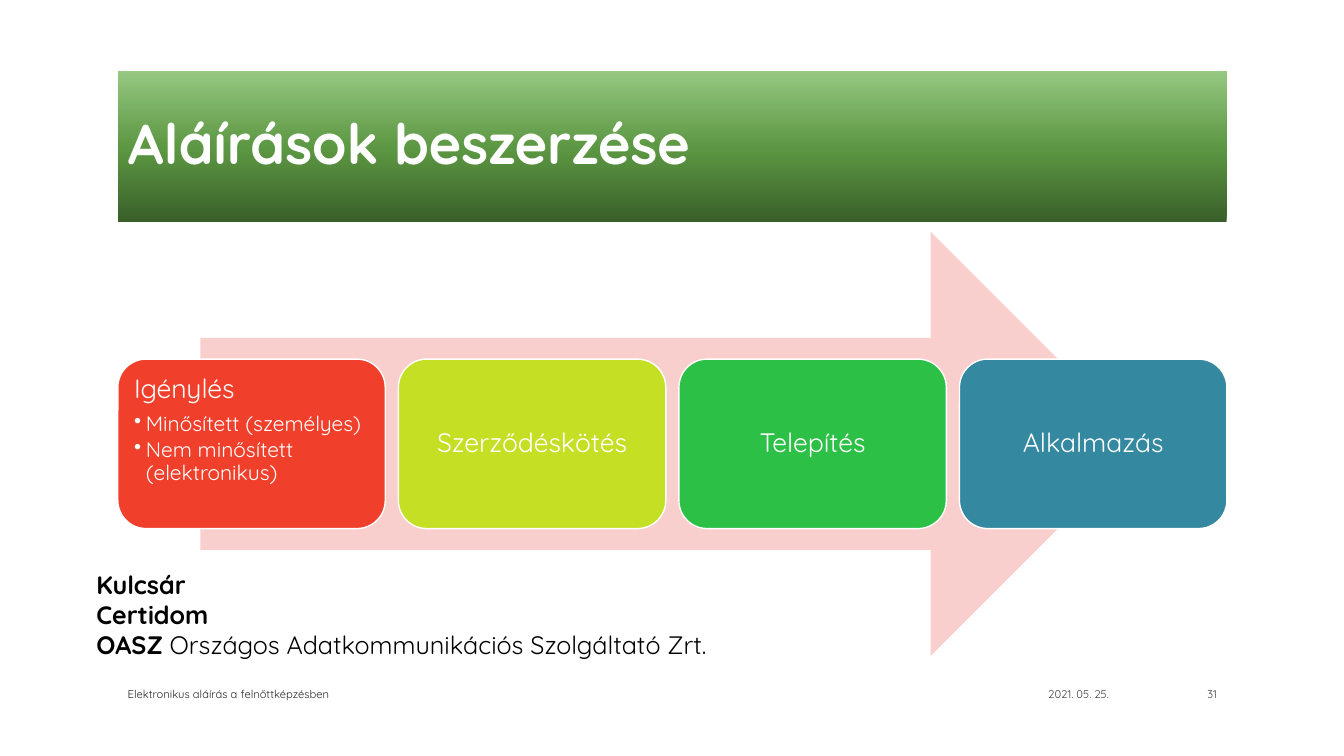
from copy import deepcopy

from lxml import etree
from pptx import Presentation
from pptx.dml.color import RGBColor
from pptx.enum.shapes import MSO_SHAPE
from pptx.enum.text import MSO_ANCHOR, MSO_AUTO_SIZE, PP_ALIGN
from pptx.oxml.ns import qn
from pptx.util import Cm, Pt

LEFT, CENTER, RIGHT = PP_ALIGN.LEFT, PP_ALIGN.CENTER, PP_ALIGN.RIGHT
TOP, MIDDLE, BOTTOM = MSO_ANCHOR.TOP, MSO_ANCHOR.MIDDLE, MSO_ANCHOR.BOTTOM
NO_AUTOFIT = MSO_AUTO_SIZE.NONE
ARROW, CARD = MSO_SHAPE.RIGHT_ARROW, MSO_SHAPE.ROUNDED_RECTANGLE
FONT = "Quicksand"

TITLE_STOPS = [(0, "3A602A"), (0.48, "5B9642"), (1, "96C881")]
STEPS = [
    ("Igénylés", "F03F2B", ["Minősített (személyes)", "Nem minősített (elektronikus)"]),
    ("Szerződéskötés", "C5DF24", []),
    ("Telepítés", "2CC047", []),
    ("Alkalmazás", "3488A0", []),
]
PROVIDERS = [
    [("Kulcsár", True)],
    [("Certidom", True)],
    [("OASZ", True), (" Országos Adatkommunikációs Szolgáltató Zrt.", False)],
]
FOOTERS = [
    ("Elektronikus aláírás a felnőttképzésben", 2.97, 16.15, LEFT, "262626"),
    ("2021. 05. 25.", 20.17, 8.03, RIGHT, "404040"),
    ("31", 28.58, 2.34, RIGHT, "404040"),
]


def rgb(value):
    """Turn a hex string into a colour."""
    return RGBColor.from_string(value)


def set_attributes(target, values):
    """Set each attribute of the target from a dict."""
    for name, value in values.items():
        setattr(target, name, value)


def add_run(p, text, size, color, bold=False):
    """Add formatted text to a paragraph."""
    r = p.add_run()
    r.text = text
    set_attributes(r.font, {"name": FONT, "size": Pt(size), "bold": bold})
    r.font.color.rgb = rgb(color)


def next_paragraph(tf, index):
    """Return the first paragraph, or a new one after it."""
    return tf.add_paragraph() if index else tf.paragraphs[0]


def add_bullet(p):
    """Give a paragraph a hanging round bullet."""
    pPr = p._p.get_or_add_pPr()
    pPr.set("marL", str(Cm(0.3)))
    pPr.set("indent", str(-Cm(0.3)))
    etree.SubElement(pPr, qn("a:buChar")).set("char", "•")


def format_title(s, text):
    """Place the title and fill it with the green gradient."""
    title = s.shapes.title
    set_attributes(title, {"left": Cm(2.97), "top": Cm(1.78),
                           "width": Cm(27.94), "height": Cm(3.81)})
    title.fill.gradient()
    title.fill.gradient_angle = 90
    stop_list = title._element.spPr.find(".//" + qn("a:gsLst"))
    stop_list.append(deepcopy(stop_list[-1]))
    for stop, (position, color) in zip(title.fill.gradient_stops, TITLE_STOPS):
        stop.position = position
        stop.color.rgb = rgb(color)
    tf = title.text_frame
    set_attributes(tf, {"auto_size": NO_AUTOFIT, "word_wrap": True,
                        "vertical_anchor": MIDDLE})
    p = tf.paragraphs[0]
    set_attributes(p, {"alignment": LEFT, "line_spacing": 0.9})
    add_run(p, text, 40, "FFFFFF", True)


def add_filled_shape(s, kind, left, top, width, height, color):
    """Add a flat preset shape without outline."""
    sp = s.shapes.add_shape(kind, Cm(left), Cm(top), Cm(width), Cm(height))
    sp.shadow.inherit = False
    sp.fill.solid()
    sp.fill.fore_color.rgb = rgb(color)
    sp.line.fill.background()
    return sp


def add_step(s, left, heading, color, details):
    """Add one process card with its heading and bulleted details."""
    sp = add_filled_shape(s, CARD, left, 9.05, 6.74, 4.27, color)
    sp.line.color.rgb = rgb("FFFFFF")
    sp.line.width = Pt(1)
    tf = sp.text_frame
    set_attributes(tf, {"word_wrap": True, "vertical_anchor": TOP if details else MIDDLE,
                        "margin_left": Cm(0.2), "margin_right": Cm(0.2),
                        "margin_top": Cm(0.2), "margin_bottom": Cm(0.2)})
    for i, text in enumerate([heading, *details]):
        p = next_paragraph(tf, i)
        if i:
            add_bullet(p)
        set_attributes(p, {"alignment": LEFT if details else CENTER, "line_spacing": 0.9,
                           "space_after": Pt(2 if i else 7 if details else 0)})
        add_run(p, text, 15 if i else 19, "FFFFFF")


def add_text(s, left, top, width, height, lines, size, color, align=LEFT, anchor=TOP):
    """Add a wrapping text box from lines of (text, bold) runs."""
    tf = s.shapes.add_textbox(Cm(left), Cm(top), Cm(width), Cm(height)).text_frame
    set_attributes(tf, {"word_wrap": True, "vertical_anchor": anchor})
    for i, runs in enumerate(lines):
        p = next_paragraph(tf, i)
        p.alignment = align
        for text, bold in runs:
            add_run(p, text, size, color, bold)


def main():
    """Build the slide and save it."""
    prs = Presentation()
    set_attributes(prs, {"slide_width": Cm(33.87), "slide_height": Cm(19.05)})
    s = prs.slides.add_slide(prs.slide_layouts[5])
    format_title(s, "Aláírások beszerzése")
    add_filled_shape(s, ARROW, 5.05, 5.84, 23.75, 10.69, "F9CFCD")
    for i, step in enumerate(STEPS):
        add_step(s, 2.97 + 7.07 * i, *step)
    for text, left, width, align, color in FOOTERS:
        add_text(s, left, 16.76, width, 1.02, [[(text, False)]], 8, color, align, BOTTOM)
    add_text(s, 2.18, 14.22, 16.94, 2.57, PROVIDERS, 18, "000000")
    prs.save("out.pptx")


if __name__ == "__main__":
    main()
